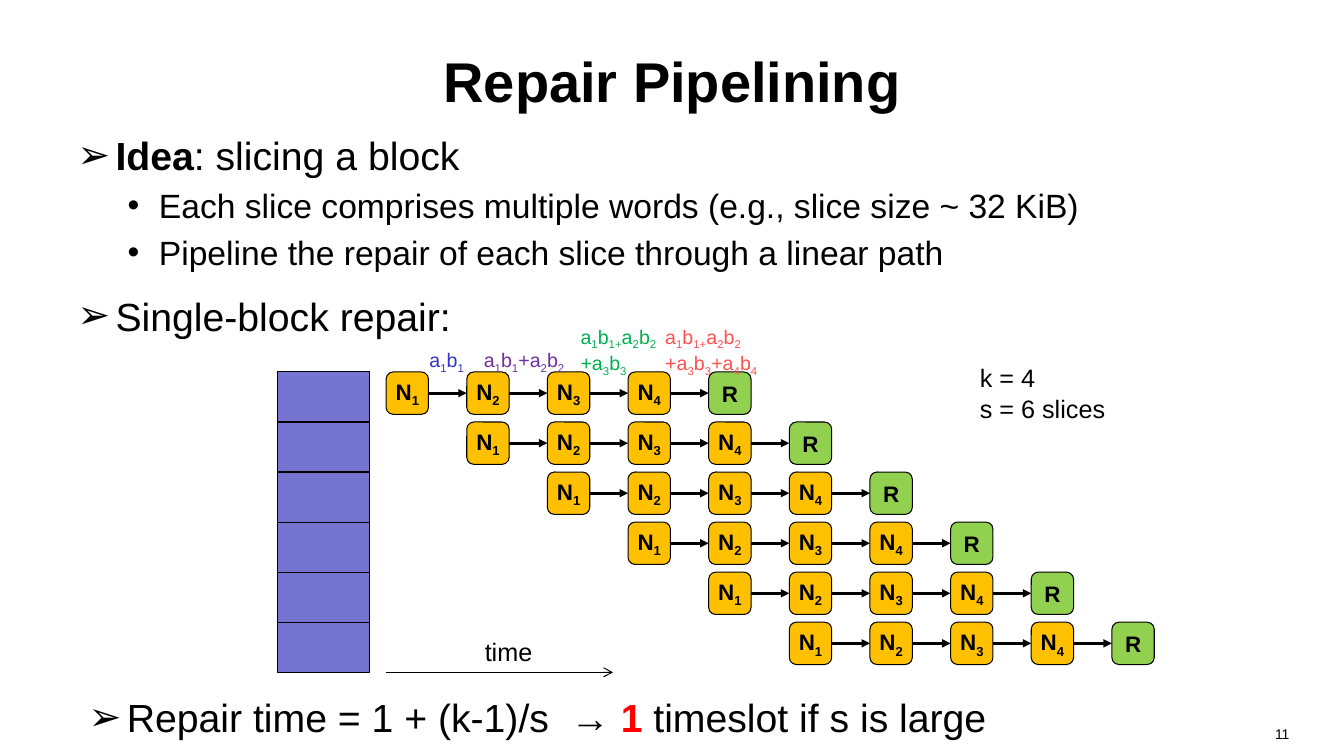
from dataclasses import dataclass

from lxml.etree import SubElement
from pptx import Presentation
from pptx.dml.color import RGBColor
from pptx.enum.shapes import MSO_CONNECTOR as Link, MSO_SHAPE as Kind
from pptx.enum.text import MSO_ANCHOR as Anchor, MSO_AUTO_SIZE as Fit, PP_ALIGN as Align
from pptx.oxml.ns import qn
from pptx.util import Inches, Pt

FONT = "Arial"
BLACK, RED, BLUE, GOLD, GREEN = "000000", "FF0000", "7575D1", "FFC000", "92D050"

deck = Presentation()
deck.slide_width, deck.slide_height = Inches(13.33), Inches(7.5)
slide = deck.slides.add_slide(deck.slide_layouts[1])
shapes = slide.shapes


@dataclass
class Box:
    """An area in percent of the slide's width and height."""
    left: float
    top: float
    width: float
    height: float

    def size(self) -> list[int]:
        wide, high = deck.slide_width / 100, deck.slide_height / 100
        return [round(self.left * wide), round(self.top * high),
                round(self.width * wide), round(self.height * high)]


@dataclass
class Note:
    box: Box
    lines: list[str]
    size: int
    color: str = BLACK


@dataclass
class Item:
    text: str
    level: int = 0


# Grid of the pipeline, in percent of the slide
LEFT, TOP = 28.73, 49.2
COL, ROW = 6.0, 6.62
NODES = ["N_1", "N_2", "N_3", "N_4", "R"]
SLICES = 6


def tint(color: str) -> RGBColor:
    return RGBColor.from_string(color)


def write(para, text: str, size: int, color: str = BLACK, mark: str = "_") -> list:
    """Split the text at each mark; every second run is the marked one."""
    runs = []
    for part in text.split(mark):
        run = para.add_run()
        run.text = part
        run.font.name, run.font.size = FONT, Pt(size)
        run.font.color.rgb = tint(color)
        runs.append(run)
    if mark == "_":
        for run in runs[1::2]:
            run.font._element.set("baseline", "-25000")
    return runs


def place(shape, box: Box) -> None:
    shape.left, shape.top, shape.width, shape.height = box.size()


def bullet(para, level: int) -> None:
    sign, left, hang, gap = [("➢", 0.38, 0.38, 50), ("•", 0.81, 0.31, 20)][level]
    para.level = level
    props = para._p.get_or_add_pPr()
    props.set("marL", str(Inches(left)))
    props.set("indent", str(-Inches(hang)))
    space = SubElement(props, qn("a:spcBef"))
    SubElement(space, qn("a:spcPct")).set("val", str(gap * 1000))
    SubElement(props, qn("a:buFont")).set("typeface", FONT)
    SubElement(props, qn("a:buChar")).set("char", sign)


def outline(frame, items: list[Item], accent: str = BLACK) -> None:
    frame.word_wrap, frame.auto_size = True, Fit.NONE
    for i, item in enumerate(items):
        para = frame.add_paragraph() if i else frame.paragraphs[0]
        bullet(para, item.level)
        runs = write(para, item.text, 24 if item.level else 28, mark="*")
        for run in runs[1::2]:
            run.font.bold = True
            run.font.color.rgb = tint(accent)


def label(note: Note) -> None:
    frame = shapes.add_textbox(*note.box.size()).text_frame
    frame.word_wrap = False
    for i, line in enumerate(note.lines):
        para = frame.add_paragraph() if i else frame.paragraphs[0]
        write(para, line, note.size, note.color)


def block(kind: Kind, box: Box, color: str):
    shape = shapes.add_shape(kind, *box.size())
    shape.shadow.inherit = False
    shape.fill.solid()
    shape.fill.fore_color.rgb = tint(color)
    shape.line.color.rgb = tint(BLACK)
    shape.line.width = Pt(0.75)
    return shape


def node(name: str, col: int, row: int):
    box = Box(LEFT + col * COL, TOP + row * ROW, 3.15, 5.6)
    shape = block(Kind.ROUNDED_RECTANGLE, box, GREEN if name == "R" else GOLD)
    frame = shape.text_frame
    frame.margin_left = frame.margin_right = frame.margin_top = frame.margin_bottom = 0
    frame.vertical_anchor = Anchor.MIDDLE
    para = frame.paragraphs[0]
    para.alignment = Align.CENTER
    for run in write(para, name, 16):
        run.font.bold = True
    return shape


def arrow(box: Box, width: float, head: str):
    x, y, wide, high = box.size()
    line = shapes.add_connector(Link.STRAIGHT, x, y, x + wide, y + high)
    line.line.color.rgb = tint(BLACK)
    line.line.width = Pt(width)
    SubElement(line.line._get_or_add_ln(), qn("a:tailEnd")).set("type", head)
    SubElement(line._element.spPr, qn("a:effectLst"))
    return line


# Title and main list
title, body = shapes.title, slide.placeholders[1]
place(title, Box(5, 2.27, 90, 16.67))
title.text_frame.vertical_anchor = Anchor.MIDDLE
title.text_frame.auto_size = Fit.NONE
head = title.text_frame.paragraphs[0]
head.alignment = Align.CENTER
write(head, "Repair Pipelining", 40)[0].font.bold = True

place(body, Box(5, 16.67, 90, 27.78))
outline(body.text_frame, [
    Item("*Idea*: slicing a block"),
    Item("Each slice comprises multiple words (e.g., slice size ~ 32 KiB)", 1),
    Item("Pipeline the repair of each slice through a linear path", 1),
    Item("Single-block repair:"),
])

# Page number and conclusion
page = shapes.add_textbox(*Box(73.35, 95.33, 23.33, 4.67).size()).text_frame
page.word_wrap = True
page.paragraphs[0].alignment = Align.RIGHT
write(page.paragraphs[0], "11", 10)

last = shapes.add_textbox(*Box(5.85, 91.07, 85.8, 7.73).size())
outline(last.text_frame, [Item("Repair time = 1 + (k-1)/s  → *1* timeslot if s is large")], RED)

# Sliced block and the pipeline of each slice
for row in range(SLICES):
    block(Kind.RECTANGLE, Box(20.63, TOP + row * ROW, 6.9, ROW), BLUE)
for row in range(SLICES):
    chain = [node(name, row + i, row) for i, name in enumerate(NODES)]
    for start, end in zip(chain, chain[1:]):
        link = arrow(Box(0, 0, 1, 0), 2, "triangle")
        link.begin_connect(start, 3)
        link.end_connect(end, 1)

# Time axis and labels
arrow(Box(LEFT, 88.93, 16.88, 0), 0.75, "arrow")
for note in [
    Note(Box(35.33, 83.47, 5.1, 5.33), ["time"], 18),
    Note(Box(72.17, 47.33, 10.95, 9.47), ["k = 4", "s = 6 slices"], 18),
    Note(Box(31.21, 45.33, 4.28, 4.53), ["a_1_b_1"], 14, "3333CC"),
    Note(Box(35.26, 45.33, 7.88, 4.53), ["a_1_b_1_+a_2_b_2"], 14, "7030A0"),
    Note(Box(42.46, 42.27, 7.58, 7.6), ["a_1_b_1+_a_2_b_2", "+a_3_b_3"], 14, "00B050"),
    Note(Box(48.76, 42.27, 8.7, 7.6), ["a_1_b_1+_a_2_b_2", "+a_3_b_3_+a_4_b_4"], 14, "FF5050"),
]:
    label(note)

deck.save("out.pptx")
